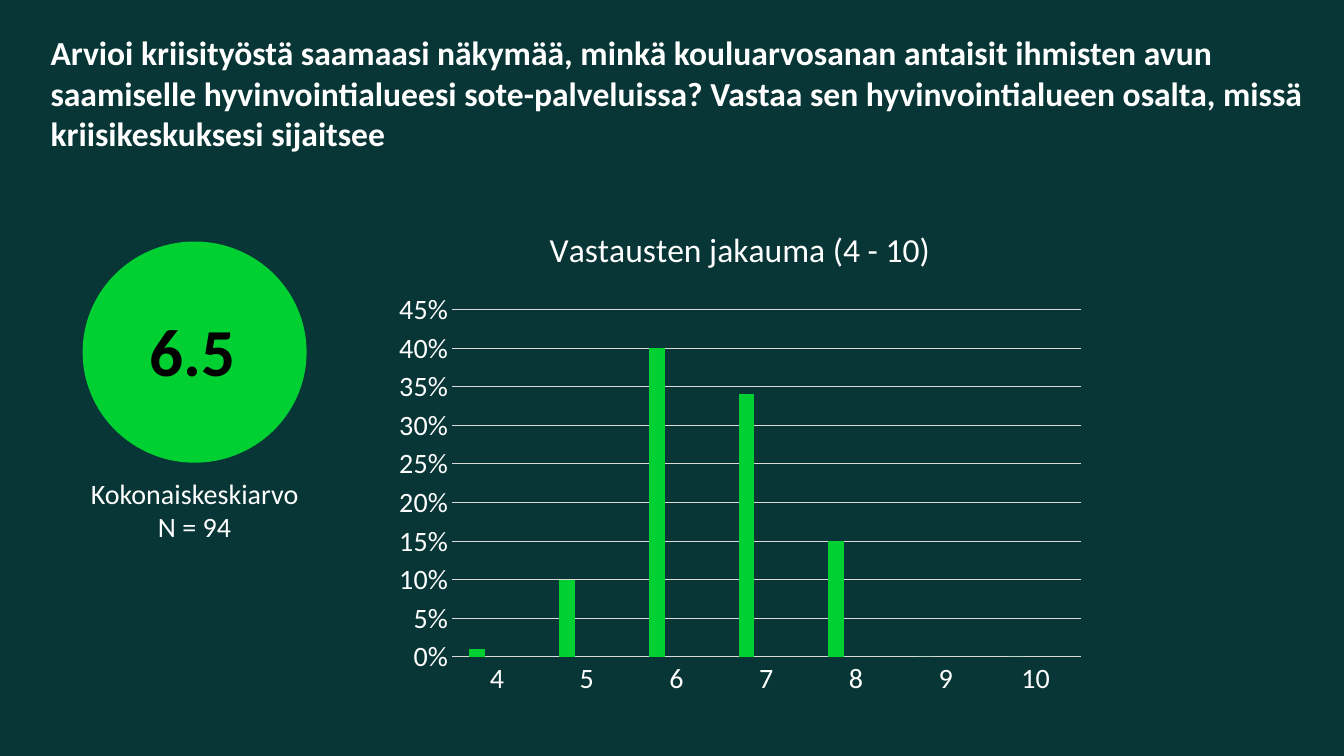
from dataclasses import dataclass

from pptx import Presentation
from pptx.chart.data import CategoryChartData
from pptx.dml.color import RGBColor as Color
from pptx.enum.chart import XL_CHART_TYPE as ChartType, XL_TICK_MARK as TickMark
from pptx.enum.shapes import MSO_SHAPE as Shape
from pptx.enum.text import MSO_ANCHOR as Anchor, PP_ALIGN as Align
from pptx.util import Pt


@dataclass(frozen=True)
class Theme:
    font: str = "Calibri"
    background: str = "083535"
    text: str = "FFFFFF"
    accent: str = "00D032"
    on_accent: str = "000000"
    grid: str = "D9D9D9"
    series: tuple = ("00D032", "19413D", "C8F5C8")
    heading: int = 24
    body: int = 20
    score: int = 48


THEME = Theme()


def rgb(value):
    return Color.from_string(value)


def style_font(font, size, color, bold=False):
    font.name, font.size, font.bold = THEME.font, Pt(size), bold
    font.color.rgb = rgb(color)


def add_text(page, box, text, size=THEME.body, color=THEME.text, bold=False,
             align=Align.LEFT, wrap=True):
    frame = page.shapes.add_textbox(*map(Pt, box)).text_frame
    frame.word_wrap = wrap
    frame.vertical_anchor = Anchor.TOP
    frame.text = text
    for para in frame.paragraphs:
        para.alignment = align
        for span in para.runs:
            style_font(span.font, size, color, bold)


# Average grade: disc, number and caption below
def add_average(page, box, score, caption):
    left, top, width, height = box
    disc = page.shapes.add_shape(Shape.OVAL, *map(Pt, box))
    disc.shadow.inherit = False
    disc.fill.solid()
    disc.fill.fore_color.rgb = rgb(THEME.accent)
    disc.line.color.rgb = rgb(THEME.accent)
    disc.line.width = Pt(1)
    add_text(page, (left - 7, top + height + 6.5, width + 14, 55.5), caption,
             align=Align.CENTER)
    add_text(page, (left + 40.5, top + 44.5, 78, 65.5), score, size=THEME.score,
             color=THEME.on_accent, bold=True, wrap=False)


# Distribution of answers as columns
def add_distribution(page, box, title, grades, shares):
    data = CategoryChartData(number_format="0%")
    data.categories = grades
    empty = [None] * len(grades)
    for number, values in enumerate((shares, empty, empty), start=1):
        data.add_series(f"Series {number}", values)
    chart = page.shapes.add_chart(ChartType.COLUMN_CLUSTERED, *map(Pt, box), data).chart
    style_font(chart.font, THEME.body, THEME.text)
    chart.has_legend = False
    chart.has_title = True
    chart.chart_title.include_in_layout = False
    chart.chart_title.text_frame.text = title
    span = chart.chart_title.text_frame.paragraphs[0].runs[0]
    style_font(span.font, THEME.heading, THEME.text)

    plot = chart.plots[0]
    plot.vary_by_categories = False
    plot.gap_width, plot.overlap = 219, -27
    for series, color in zip(plot.series, THEME.series):
        series.format.fill.solid()
        series.format.fill.fore_color.rgb = rgb(color)

    grade_axis, share_axis = chart.category_axis, chart.value_axis
    for axis in (grade_axis, share_axis):
        axis.major_tick_mark = axis.minor_tick_mark = TickMark.NONE
        style_font(axis.tick_labels.font, THEME.body, THEME.text)
    share_axis.minimum_scale, share_axis.maximum_scale = 0, 0.45
    share_axis.major_unit = 0.05
    share_axis.tick_labels.number_format = "0%"
    share_axis.tick_labels.number_format_is_linked = False
    share_axis.format.line.fill.background()
    for line in (grade_axis.format.line, share_axis.major_gridlines.format.line):
        line.color.rgb = rgb(THEME.grid)
        line.width = Pt(0.75)


def add_survey_page(deck):
    page = deck.slides.add_slide(deck.slide_layouts[6])
    page.background.fill.solid()
    page.background.fill.fore_color.rgb = rgb(THEME.background)
    add_text(page, (29, 19.5, 912, 78.5),
             "Arvioi kriisityöstä saamaasi näkymää, minkä kouluarvosanan antaisit "
             "ihmisten avun saamiselle hyvinvointialueesi sote-palveluissa? Vastaa "
             "sen hyvinvointialueen osalta, missä kriisikeskuksesi sijaitsee",
             size=THEME.heading, bold=True)
    add_average(page, (59.5, 173, 159, 157), "6.5", "Kokonaiskeskiarvo\nN = 94")
    add_distribution(page, (275, 147, 507, 357), "Vastausten jakauma (4 - 10)",
                     [str(grade) for grade in range(4, 11)],
                     [0.01, 0.1, 0.4, 0.34, 0.15, 0, 0])


def main():
    deck = Presentation()
    deck.slide_width, deck.slide_height = Pt(960), Pt(540)
    add_survey_page(deck)
    deck.save("out.pptx")


if __name__ == "__main__":
    main()
